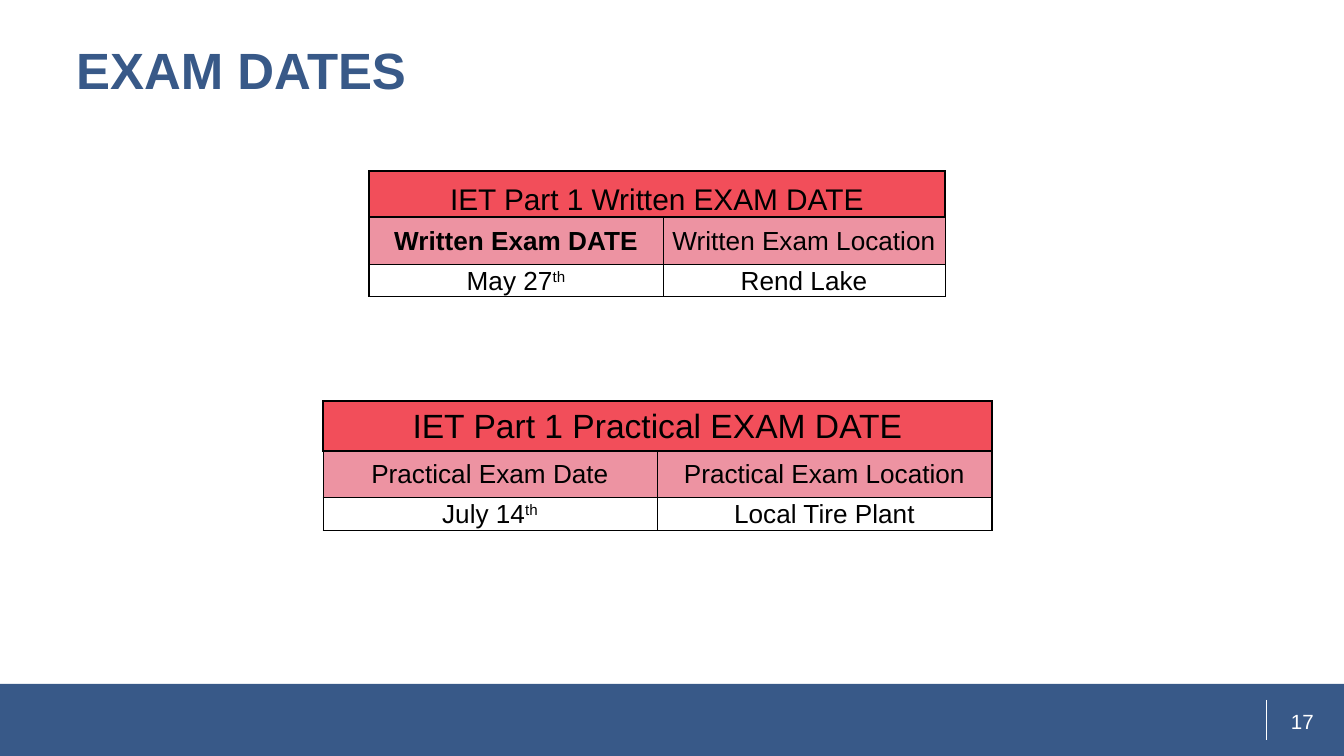
import pptx
import pptx.util
import pptx.dml.color
import pptx.enum.shapes
import pptx.enum.text
import pptx.oxml
import pptx.oxml.ns
from lxml import etree

PX = 914400 / 134.4
ANCHOR = pptx.enum.text.MSO_ANCHOR
ALIGN = pptx.enum.text.PP_ALIGN
FONT, BLUE, WHITE, BLACK = "Arial", "385988", "FFFFFF", "000000"
RED, PINK = "F24E5A", "ED93A2"

# Each cell is a list of runs; "th" is raised. side_lines: left and right edges in pt.
TABLES = [
    {"at": (369, 171), "cols": (294, 282), "rows": (46, 47, 31),
     "title": "IET Part 1 Written EXAM DATE", "title_size": 16,
     "anchors": (ANCHOR.BOTTOM, ANCHOR.MIDDLE, ANCHOR.BOTTOM),
     "side_lines": (1, 0.5), "bold": ["Written Exam DATE"],
     "body": [[["Written Exam DATE"], ["Written Exam Location"]],
              [["May 27", "th"], ["Rend Lake"]]]},
    {"at": (323, 401), "cols": (334, 335), "rows": (50, 47, 31),
     "title": "IET Part 1 Practical EXAM DATE", "title_size": 18,
     "anchors": (ANCHOR.MIDDLE, ANCHOR.MIDDLE, ANCHOR.MIDDLE),
     "side_lines": (0.5, 1), "bold": [],
     "body": [[["Practical Exam Date"], ["Practical Exam Location"]],
              [["July 14", "th"], ["Local Tire Plant"]]]},
]


def px(n):
    return round(n * PX)


def rgb(color):
    return pptx.dml.color.RGBColor.from_string(color)


def set_font(p, size, color, bold=False):
    p.font.name, p.font.size, p.font.bold = FONT, pptx.util.Pt(size), bold
    p.font.color.rgb = rgb(color)


def add_text(slide, box, text, size, color, align, bold=False):
    tf = slide.shapes.add_textbox(*map(px, box)).text_frame
    tf.word_wrap = True
    tf.vertical_anchor = ANCHOR.MIDDLE
    p = tf.paragraphs[0]
    p.text, p.alignment = text, align
    set_font(p, size, color, bold)


def set_borders(cell, widths):
    """Draw black left, right, top and bottom borders, widths in pt."""
    tcPr = cell._tc.get_or_add_tcPr()
    for i, (side, width) in enumerate(zip("LRTB", widths)):
        ln = pptx.oxml.parse_xml(
            f'<a:ln{side} {pptx.oxml.ns.nsdecls("a")} w="{pptx.util.Pt(width)}">'
            f'<a:solidFill><a:srgbClr val="{BLACK}"/></a:solidFill></a:ln{side}>')
        tcPr.insert(i, ln)


def fill_cell(cell, runs, size, fill, anchor, bold):
    cell.fill.solid()
    cell.fill.fore_color.rgb = rgb(fill)
    cell.vertical_anchor = anchor
    cell.margin_left = cell.margin_right = cell.margin_top = px(1)
    cell.margin_bottom = 0
    p = cell.text_frame.paragraphs[0]
    p.alignment = ALIGN.CENTER
    set_font(p, size, BLACK, bold)
    for text in runs:
        r = p.add_run()
        r.text = text
        if text == "th":
            r._r.get_or_add_rPr().set("baseline", "30000")


def add_exam_table(slide, spec):
    cols, rows = spec["cols"], spec["rows"]
    box = (*spec["at"], sum(cols), sum(rows))
    table = slide.shapes.add_table(len(rows), len(cols), *map(px, box)).table
    for col, width in zip(table.columns, cols):
        col.width = px(width)
    for row, height in zip(table.rows, rows):
        row.height = px(height)
    table.cell(0, 0).merge(table.cell(0, 1))

    left, right = spec["side_lines"]
    grid = [[[spec["title"]], []]] + spec["body"]
    sizes, fills = (spec["title_size"], 14, 14), (RED, PINK, WHITE)
    for i, row in enumerate(grid):
        for j, runs in enumerate(row):
            cell = table.cell(i, j)
            fill_cell(cell, runs, sizes[i], fills[i], spec["anchors"][i],
                      runs == spec["bold"])
            if i == 0:
                set_borders(cell, (1, 1, 1, 1))
            else:
                set_borders(cell, (left if j == 0 else 0.5, right if j == 1 else 0.5,
                                   1 if i == 1 else 0.5, 0.5))


def main():
    prs = pptx.Presentation()
    prs.slide_width, prs.slide_height = px(1344), px(756)
    slide = prs.slides.add_slide(prs.slide_layouts[6])

    band = slide.shapes.add_shape(pptx.enum.shapes.MSO_SHAPE.RECTANGLE,
                                  *map(px, (0, 684, 1344, 72)))
    band.shadow.inherit = False
    band.fill.solid()
    band.fill.fore_color.rgb = rgb(BLUE)
    band.line.fill.background()

    divider = slide.shapes.add_connector(pptx.enum.shapes.MSO_CONNECTOR.STRAIGHT,
                                         *map(px, (1267, 700, 1267, 740)))
    divider.line.color.rgb = rgb(WHITE)
    divider.line.width = pptx.util.Pt(0.5)
    etree.SubElement(divider._element.spPr, pptx.oxml.ns.qn("a:effectLst"))

    add_text(slide, (1267, 701, 60, 40), "17", 11, WHITE, ALIGN.RIGHT)
    add_text(slide, (63, 24, 1236, 91), "EXAM DATES", 27.3, BLUE, ALIGN.LEFT, True)
    for spec in TABLES:
        add_exam_table(slide, spec)
    prs.save("out.pptx")


if __name__ == "__main__":
    main()
